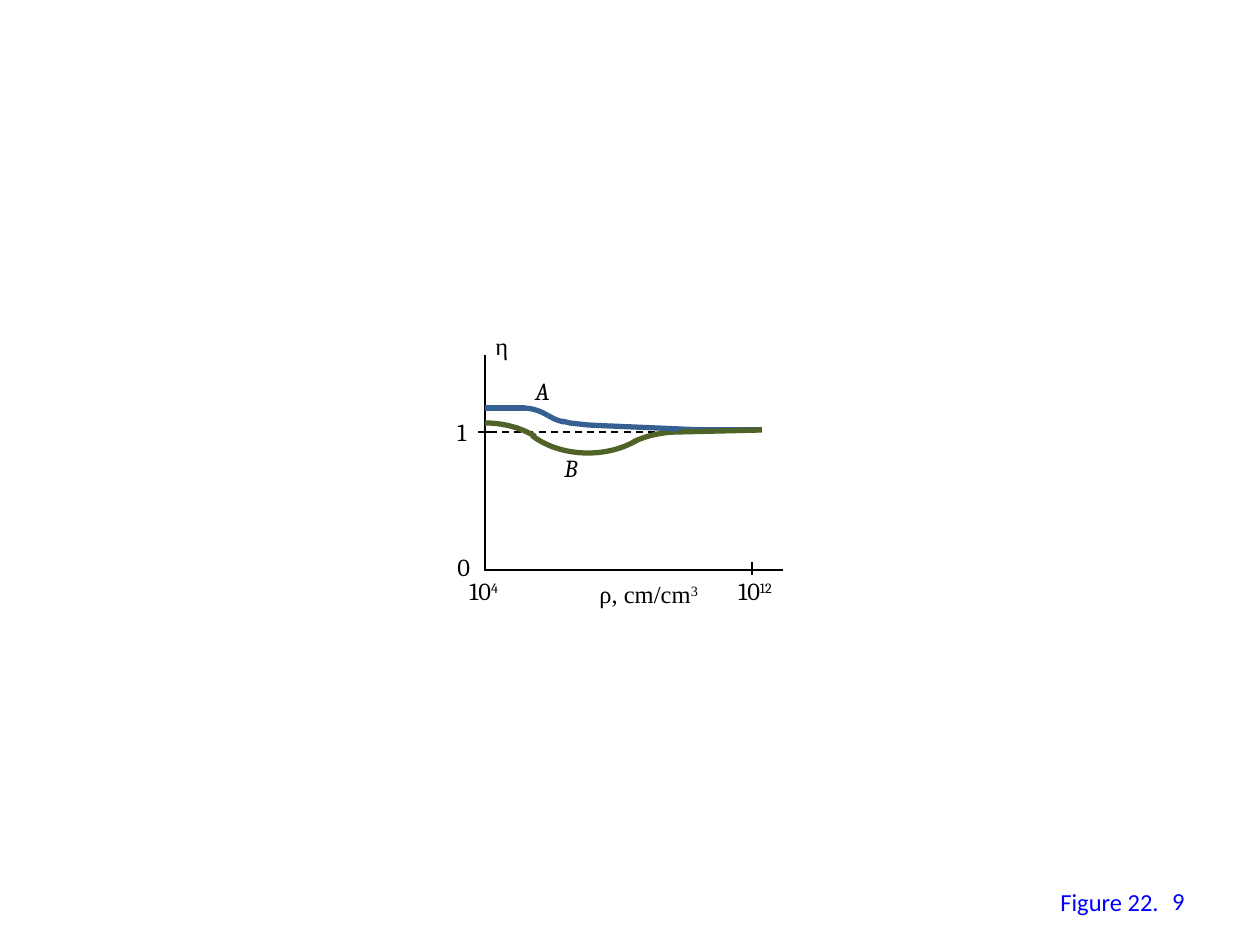
import pptx
import pptx.util
import pptx.dml.color
import pptx.enum.dml
import pptx.enum.shapes
import pptx.enum.text
import pptx.oxml

BLACK = pptx.dml.color.RGBColor(0x00, 0x00, 0x00)
CURVE_A = pptx.dml.color.RGBColor(0x37, 0x60, 0x92)
CURVE_B = pptx.dml.color.RGBColor(0x4F, 0x62, 0x28)
CAPTION = pptx.dml.color.RGBColor(0x00, 0x00, 0xFF)
SERIF, GREEK, SANS = "Cambria", "Times New Roman", "Calibri"
PX = 914400 / 126

# Labels: text, superscript, left, top, width, font, italic
LABELS = [
    ("A", "", 523, 370, 47, SERIF, True),
    ("B", "", 552, 447, 47, SERIF, True),
    ("ρ, cm/cm", "3", 587, 573, 131, GREEK, False),
    ("10", "4", 457, 570, 59, SERIF, False),
    ("10", "12", 726, 570, 68, SERIF, False),
    ("0", "", 445, 546, 38, SERIF, False),
    ("1", "", 445, 411, 38, SERIF, False),
    ("η", "", 483, 325, 47, GREEK, False),
]
LABEL_HEIGHT = 43

# Lines: x1, y1, x2, y2, colour, points
AXES = [
    (783, 570, 484, 570, BLACK, 1.5),
    (485, 571, 485, 355, BLACK, 1.5),
    (752, 575, 752, 562, BLACK, 1),
    (490, 432, 478, 432, BLACK, 1),
]
UNITY_LINE = (490, 432, 756, 432, BLACK, 1)
CURVE_LINES = [
    (525, 408, 485, 408, CURVE_A, 3),
    (610, 426, 704, 430, CURVE_A, 3),
    (679, 429, 762, 429, CURVE_A, 2.25),
    (679, 432, 762, 430, CURVE_B, 3),
]
CURVE_A_BEND = [(562, 421), (570, 423), (588, 425), (610, 426)]

# Arcs: left, top, width, height, start and end degrees clockwise, colour
ARCS = [
    (527, 330, 93, 93, 101.51, 123.14, CURVE_A),
    (476, 408, 93, 93, 269.54, 303.14, CURVE_A),
    (513, 348, 150, 105, 40.35, 148.03, CURVE_B),
    (604, 432, 150, 96, 220.35, 270.32, CURVE_B),
    (404, 423, 163, 129, 269.69, 314.32, CURVE_B),
]


def px(*lengths):
    return [pptx.util.Emu(round(length * PX)) for length in lengths]


def style_line(shape, color, points):
    shape.line.color.rgb = color
    shape.line.width = pptx.util.Pt(points)


def add_line(x1, y1, x2, y2, color, points):
    line = slide.shapes.add_connector(
        pptx.enum.shapes.MSO_CONNECTOR.STRAIGHT, *px(x1, y1, x2, y2))
    style_line(line, color, points)
    line._element.spPr.append(pptx.oxml.parse_xml(
        '<a:effectLst xmlns:a="http://schemas.openxmlformats.org/drawingml/2006/main"/>'))
    return line


def add_text(text, superscript, left, top, width, font, italic,
             color=BLACK, height=LABEL_HEIGHT):
    box = slide.shapes.add_textbox(*px(left, top, width, height))
    frame = box.text_frame
    frame.word_wrap = False
    frame.text = text
    paragraph = frame.paragraphs[0]
    if superscript:
        raised = paragraph.add_run()
        raised.text = superscript
        raised._r.get_or_add_rPr().set("baseline", "30000")
    for run in paragraph.runs:
        run.font.name = font
        run.font.size = pptx.util.Pt(14)
        run.font.italic = italic
        run.font.color.rgb = color
    return frame


presentation = pptx.Presentation()
presentation.slide_width, presentation.slide_height = px(1260, 945)
slide = presentation.slides.add_slide(presentation.slide_layouts[6])

# Axes, ticks and the dashed line at 1
for axis in AXES:
    add_line(*axis)
unity = add_line(*UNITY_LINE)
unity.line.dash_style = pptx.enum.dml.MSO_LINE.DASH

# Curves
bend_builder = slide.shapes.build_freeform(*CURVE_A_BEND[0], scale=PX)
bend_builder.add_line_segments(CURVE_A_BEND[1:], close=False)
bend = bend_builder.convert_to_shape()
bend.fill.background()
bend.shadow.inherit = False
style_line(bend, CURVE_A, 3)

for left, top, width, height, start, end, color in ARCS:
    arc = slide.shapes.add_shape(
        pptx.enum.shapes.MSO_SHAPE.ARC, *px(left, top, width, height))
    # Adjustments count 100000ths, arc angles 60000ths of a degree
    arc.adjustments[0] = start * 0.6
    arc.adjustments[1] = end * 0.6
    arc.fill.background()
    arc.shadow.inherit = False
    style_line(arc, color, 3)

for curve_line in CURVE_LINES:
    add_line(*curve_line)

# Labels
for label in LABELS:
    add_text(*label)

# Figure caption and number
add_text("Figure 22.", "", 1048, 881, 125, SANS, False, CAPTION)
number = add_text("9", "", 903, 876, 294, SANS, False, CAPTION, 50)
number.word_wrap = True
number.vertical_anchor = pptx.enum.text.MSO_ANCHOR.MIDDLE
number.paragraphs[0].alignment = pptx.enum.text.PP_ALIGN.RIGHT

presentation.save("out.pptx")
